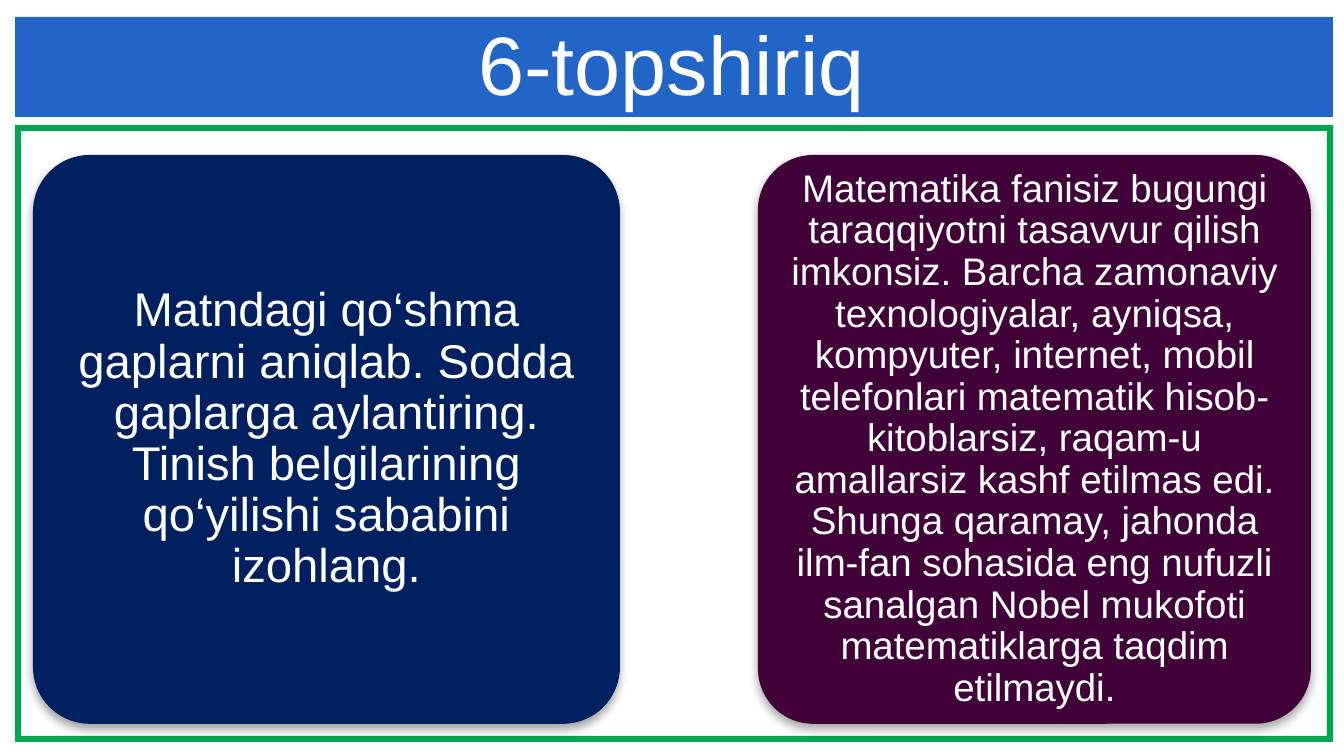
from dataclasses import dataclass

import pptx
import pptx.dml.color
import pptx.enum.shapes
import pptx.enum.text
import pptx.oxml
import pptx.oxml.ns
import pptx.util

EMU_PER_PX = 914400 / 213


@dataclass(frozen=True)
class Theme:
    font: str = "Arial"
    text: str = "FFFFFF"
    banner: str = "2365C7"
    frame: str = "00A650"
    task: str = "002060"
    passage: str = "400239"
    title_size: int = 28
    task_size: int = 16
    passage_size: int = 13


@dataclass(frozen=True)
class Box:
    left: int
    top: int
    width: int
    height: int

    def emu(self) -> list[int]:
        return [px(side) for side in (self.left, self.top, self.width, self.height)]

    def corners(self) -> list[tuple[int, int]]:
        right, bottom = self.left + self.width, self.top + self.height
        return [(self.left, self.top), (right, self.top), (right, bottom), (self.left, bottom)]


@dataclass(frozen=True)
class Card:
    box: Box
    fill: str
    size: int
    text: str


THEME = Theme()
BANNER = Box(15, 17, 1318, 100)
TITLE = Box(70, 13, 1203, 100)
FRAME_OUTER = Box(15, 125, 1318, 617)
FRAME_INNER = Box(21, 131, 1306, 605)
CARDS = [
    Card(
        Box(33, 155, 587, 569), THEME.task, THEME.task_size,
        "Matndagi qo‘shma gaplarni aniqlab. Sodda gaplarga aylantiring. "
        "Tinish belgilarining qo‘yilishi sababini izohlang.",
    ),
    Card(
        Box(758, 155, 553, 569), THEME.passage, THEME.passage_size,
        "Matematika fanisiz bugungi taraqqiyotni tasavvur qilish imkonsiz. "
        "Barcha zamonaviy texnologiyalar, ayniqsa, kompyuter, internet, mobil "
        "telefonlari matematik hisob-kitoblarsiz, raqam-u amallarsiz kashf etilmas edi. "
        "Shunga qaramay, jahonda ilm-fan sohasida eng nufuzli sanalgan Nobel mukofoti "
        "matematiklarga taqdim etilmaydi.",
    ),
]


def px(length: int) -> int:
    return round(length * EMU_PER_PX)


def paint(shape, color: str) -> None:
    shape.shadow.inherit = False
    shape.fill.solid()
    shape.fill.fore_color.rgb = pptx.dml.color.RGBColor.from_string(color)
    shape.line.fill.background()


def write(shape, text: str, *, size: int, anchor, spacing: float = 1.0,
          inset_x: int = 0, inset_y: int = 0) -> None:
    frame = shape.text_frame
    frame.word_wrap = True
    frame.vertical_anchor = anchor
    frame.margin_left = frame.margin_right = px(inset_x)
    frame.margin_top = frame.margin_bottom = px(inset_y)
    para = frame.paragraphs[0]
    para.alignment = pptx.enum.text.PP_ALIGN.CENTER
    para.line_spacing = spacing
    span = para.add_run()
    span.text = text
    span.font.name = THEME.font
    span.font.size = pptx.util.Pt(size)
    span.font.color.rgb = pptx.dml.color.RGBColor.from_string(THEME.text)


def add_soft_shadow(shape) -> None:
    effects = shape.element.spPr.find(pptx.oxml.ns.qn("a:effectLst"))
    effects.append(pptx.oxml.parse_xml(
        f'<a:outerShdw {pptx.oxml.ns.nsdecls("a")} blurRad="40000" dist="23000" '
        'dir="5400000" rotWithShape="0"><a:srgbClr val="000000">'
        '<a:alpha val="35000"/></a:srgbClr></a:outerShdw>'
    ))


def add_frame(page, outer: Box, inner: Box, color: str) -> None:
    """Draw a ring: the inner outline runs the other way and cuts a hole."""
    start, *rest = outer.corners()
    hole_start, *hole_rest = inner.corners()
    builder = page.shapes.build_freeform(*start, scale=EMU_PER_PX)
    builder.add_line_segments(rest, close=True)
    builder.move_to(*hole_start)
    builder.add_line_segments(hole_rest[::-1], close=True)
    paint(builder.convert_to_shape(), color)


def add_card(page, card: Card) -> None:
    shape = page.shapes.add_shape(
        pptx.enum.shapes.MSO_SHAPE.ROUNDED_RECTANGLE, *card.box.emu())
    shape.adjustments[0] = 0.1
    paint(shape, card.fill)
    add_soft_shadow(shape)
    write(shape, card.text, size=card.size, spacing=0.9, inset_x=6, inset_y=4,
          anchor=pptx.enum.text.MSO_ANCHOR.MIDDLE)


def main() -> None:
    deck = pptx.Presentation()
    deck.slide_width = pptx.util.Inches(6.31)
    deck.slide_height = pptx.util.Inches(3.55)
    page = deck.slides.add_slide(deck.slide_layouts[6])

    add_frame(page, FRAME_OUTER, FRAME_INNER, THEME.frame)
    banner = page.shapes.add_shape(pptx.enum.shapes.MSO_SHAPE.RECTANGLE, *BANNER.emu())
    paint(banner, THEME.banner)
    title = page.shapes.add_textbox(*TITLE.emu())
    write(title, "6-topshiriq", size=THEME.title_size,
          anchor=pptx.enum.text.MSO_ANCHOR.TOP)
    for card in CARDS:
        add_card(page, card)

    deck.save("out.pptx")


if __name__ == "__main__":
    main()
